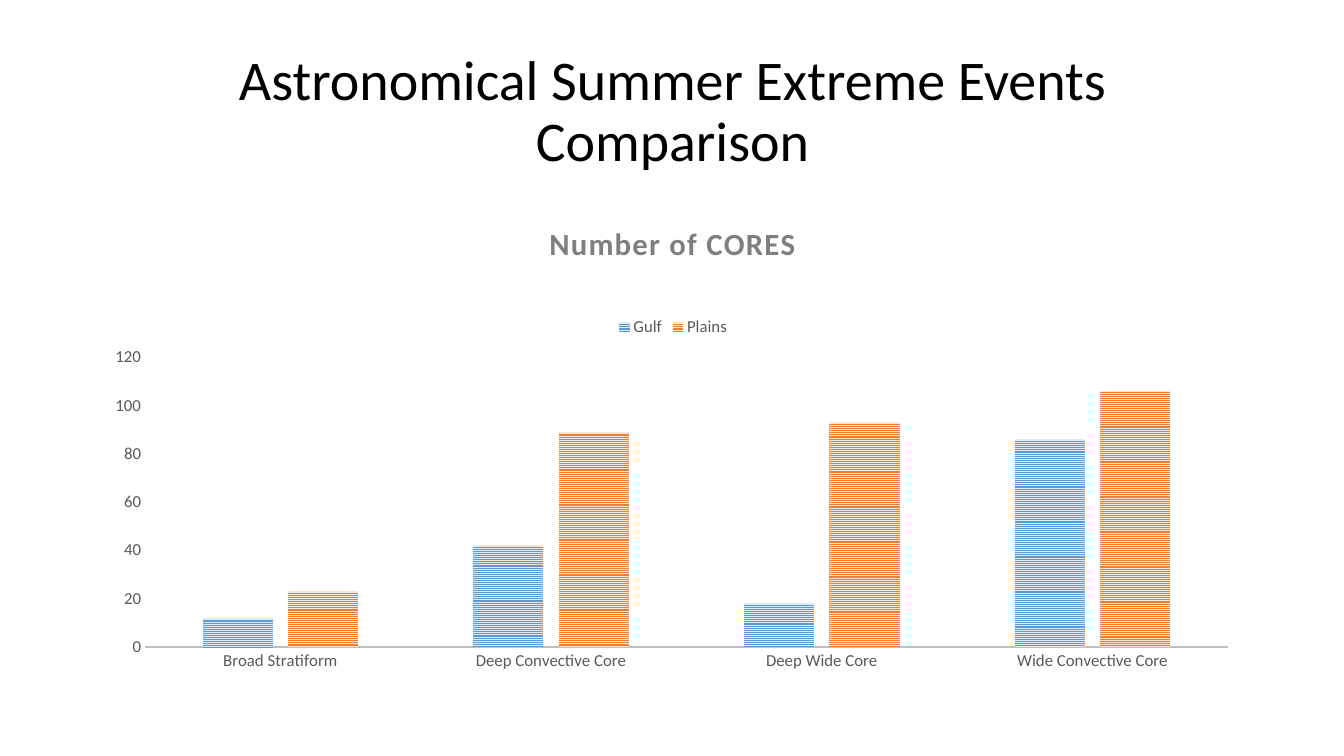
import pptx
import pptx.util
import pptx.chart.data
import pptx.dml.color
import pptx.enum.chart
import pptx.enum.dml
import pptx.enum.text
import lxml.etree

# Content
HEADING = "Astronomical Summer Extreme Events Comparison"
CHART_TITLE = "Number of CORES"
CORE_TYPES = ["Broad Stratiform", "Deep Convective Core", "Deep Wide Core", "Wide Convective Core"]

RGB = pptx.dml.color.RGBColor
BLACK = RGB(0x00, 0x00, 0x00)
TITLE_GRAY = RGB(0x7F, 0x7F, 0x7F)
LABEL_GRAY = RGB(0x59, 0x59, 0x59)
AXIS_GRAY = RGB(0xBF, 0xBF, 0xBF)
BLUE, PALE_BLUE = RGB(0x5B, 0x9B, 0xD5), RGB(0xDE, 0xEB, 0xF7)
ORANGE, PALE_ORANGE = RGB(0xED, 0x7D, 0x31), RGB(0xFB, 0xE5, 0xD6)

# Region, counts per core type, stripe colour, ground colour
REGIONS = [
    ("Gulf", (12, 42, 18, 86), BLUE, PALE_BLUE),
    ("Plains", (23, 89, 93, 106), ORANGE, PALE_ORANGE),
]

# Geometry in px: left, top, width, height
FONT = "Calibri"
EMU_PER_PX = 914400 / 100.8
HEADING_BOX = (93, 40, 1159, 146)
CHART_BOX = (93, 202, 1159, 480)
PLOT_BOX = (145, 357, 1083, 290)
LEGEND_CORNER = (614, 313)


def px(*lengths):
    return [pptx.util.Emu(round(length * EMU_PER_PX)) for length in lengths]


def style(font, size, color, bold=False):
    font.name, font.size, font.bold = FONT, pptx.util.Pt(size), bold
    font.color.rgb = color


def place(part, index, box, inner=False):
    """Fix a chart part at a px box, as fractions of the chart."""
    ns = part.nsmap["c"]
    for old in part.findall(f"{{{ns}}}layout"):
        part.remove(old)
    layout = lxml.etree.Element(f"{{{ns}}}layout")
    manual = lxml.etree.SubElement(layout, f"{{{ns}}}manualLayout")
    left, top, width, height = CHART_BOX
    fractions = [(box[0] - left) / width, (box[1] - top) / height]
    fractions += [length / whole for length, whole in zip(box[2:], (width, height))]
    settings = [("layoutTarget", "inner")] if inner else []
    settings += [("xMode", "edge"), ("yMode", "edge")]
    settings += [(key, f"{value:.4f}") for key, value in zip("xywh", fractions)]
    for key, value in settings:
        lxml.etree.SubElement(manual, f"{{{ns}}}{key}").set("val", value)
    part.insert(index, layout)


deck = pptx.Presentation()
deck.slide_width, deck.slide_height = px(1344, 756)
slide = deck.slides.add_slide(deck.slide_layouts[6])

# Heading
heading = slide.shapes.add_textbox(*px(*HEADING_BOX)).text_frame
heading.word_wrap = True
heading.vertical_anchor = pptx.enum.text.MSO_ANCHOR.MIDDLE
heading_line = heading.paragraphs[0]
heading_line.alignment = pptx.enum.text.PP_ALIGN.CENTER
heading_line.line_spacing = 0.9
heading_run = heading_line.add_run()
heading_run.text = HEADING
style(heading_run.font, 40, BLACK)

# Chart
counts = pptx.chart.data.CategoryChartData()
counts.categories = CORE_TYPES
for region, values, _, _ in REGIONS:
    counts.add_series(region, values)
chart = slide.shapes.add_chart(
    pptx.enum.chart.XL_CHART_TYPE.COLUMN_CLUSTERED, *px(*CHART_BOX), counts).chart
style(chart.font, 10, BLACK)

# Chart title
chart.has_title = True
title_run = chart.chart_title.text_frame.paragraphs[0].add_run()
title_run.text = CHART_TITLE
style(title_run.font, 22, TITLE_GRAY, bold=True)
title_run._r.get_or_add_rPr().set("spc", "100")
chart.chart_title.include_in_layout = False

# Legend
chart.has_legend = True
chart.legend.position = pptx.enum.chart.XL_LEGEND_POSITION.TOP
chart.legend.include_in_layout = False
style(chart.legend.font, 12, LABEL_GRAY)
place(chart.legend._element, 1, LEGEND_CORNER)

# Axes
for axis in (chart.category_axis, chart.value_axis):
    axis.has_major_gridlines = False
    axis.major_tick_mark = axis.minor_tick_mark = pptx.enum.chart.XL_TICK_MARK.NONE
    style(axis.tick_labels.font, 12, LABEL_GRAY)
chart.category_axis.format.line.color.rgb = AXIS_GRAY
chart.category_axis.format.line.width = pptx.util.Pt(1.5)
chart.value_axis.format.line.fill.background()
chart.value_axis.minimum_scale, chart.value_axis.maximum_scale = 0, 120
chart.value_axis.major_unit = 20

# Striped columns
columns = chart.plots[0]
columns.vary_by_categories = False
columns.gap_width, columns.overlap = 164, -22
for series, (_, _, stripe, ground) in zip(columns.series, REGIONS):
    fill = series.format.fill
    fill.patterned()
    fill.pattern = pptx.enum.dml.MSO_PATTERN.NARROW_HORIZONTAL
    fill.fore_color.rgb, fill.back_color.rgb = stripe, ground
    series.format.line.fill.background()
place(chart._chartSpace.chart.plotArea, 0, PLOT_BOX, inner=True)

deck.save("out.pptx")
